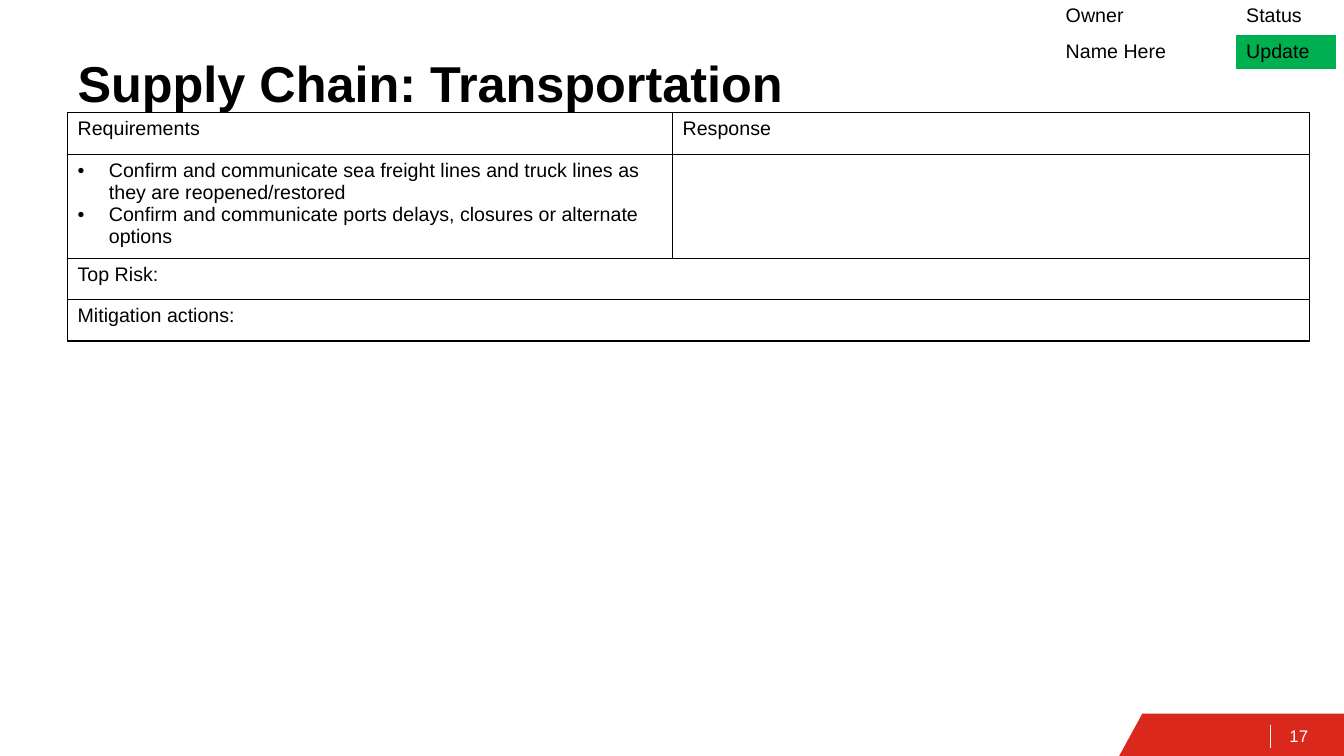
"""Build the supply chain transportation status slide."""
import lxml.etree
import pptx
import pptx.dml.color
import pptx.enum.shapes
import pptx.enum.text
import pptx.oxml
import pptx.oxml.ns
import pptx.util

Inches = pptx.util.Inches
Pt = pptx.util.Pt
qn = pptx.oxml.ns.qn


def colour(value):
    return pptx.dml.color.RGBColor.from_string(value)


class StatusSlide:
    font = "Arial"
    ink = "000000"
    paper = "FFFFFF"
    accent = "DA281C"
    done = "00B050"
    body_size = 14

    def __init__(self, deck):
        self.slide = deck.slides.add_slide(deck.slide_layouts[5])
        self.shapes = self.slide.shapes
        background = self.slide.background.fill
        background.solid()
        background.fore_color.rgb = colour(self.paper)

    def add_words(self, paragraph, words, size, ink, bold=False):
        paragraph.alignment = pptx.enum.text.PP_ALIGN.LEFT
        run = paragraph.add_run()
        run.text = words
        run.font.name = self.font
        run.font.size = Pt(size)
        run.font.bold = bold
        run.font.color.rgb = colour(ink)

    def title(self, words, left, top, width, height):
        heading = self.shapes.title
        heading.left, heading.top = Inches(left), Inches(top)
        heading.width, heading.height = Inches(width), Inches(height)
        frame = heading.text_frame
        frame.word_wrap = True
        frame.auto_size = pptx.enum.text.MSO_AUTO_SIZE.NONE
        frame.vertical_anchor = pptx.enum.text.MSO_ANCHOR.TOP
        frame.paragraphs[0].line_spacing = Pt(48)
        self.add_words(frame.paragraphs[0], words, 36, self.ink, bold=True)

    def banner(self, points):
        corners = [(Inches(x), Inches(y)) for x, y in points]
        outline = self.shapes.build_freeform(*corners[0])
        outline.add_line_segments(corners[1:], close=True)
        band = outline.convert_to_shape()
        band.shadow.inherit = False
        band.fill.solid()
        band.fill.fore_color.rgb = colour(self.accent)
        band.line.fill.background()

    def rule(self, x, top, bottom):
        divider = self.shapes.add_connector(
            pptx.enum.shapes.MSO_CONNECTOR.STRAIGHT,
            Inches(x), Inches(top), Inches(x), Inches(bottom))
        divider.line.color.rgb = colour(self.paper)
        divider.line.width = Pt(0.75)
        lxml.etree.SubElement(divider._element.spPr, qn("a:effectLst"))

    def page_number(self, words, left, top, width, height):
        number = self.shapes.add_textbox(
            Inches(left), Inches(top), Inches(width), Inches(height))
        frame = number.text_frame
        frame.word_wrap = True
        frame.vertical_anchor = pptx.enum.text.MSO_ANCHOR.MIDDLE
        frame.margin_left = frame.margin_right = Inches(0.13)
        frame.margin_top = frame.margin_bottom = Inches(0.07)
        self.add_words(frame.paragraphs[0], words, 12, self.paper)

    def bullet(self, paragraph):
        properties = paragraph._p.get_or_add_pPr()
        properties.set("marL", str(Inches(0.31)))
        properties.set("indent", str(-Inches(0.31)))
        font = lxml.etree.SubElement(properties, qn("a:buFont"))
        font.set("typeface", self.font)
        lxml.etree.SubElement(properties, qn("a:buChar")).set("char", "•")

    def border(self, cell, visible):
        properties = cell._tc.get_or_add_tcPr()
        for position, side in enumerate(("lnL", "lnR", "lnT", "lnB")):
            edge = lxml.etree.Element(qn(f"a:{side}"))
            edge.set("w", str(Pt(1)))
            if visible:
                fill = lxml.etree.SubElement(edge, qn("a:solidFill"))
                lxml.etree.SubElement(fill, qn("a:srgbClr")).set("val", self.ink)
            else:
                lxml.etree.SubElement(edge, qn("a:noFill"))
            properties.insert(position, edge)

    def table(self, left, top, columns, heights, rows, bordered, fills=None):
        grid = self.shapes.add_table(
            len(rows), len(columns), Inches(left), Inches(top),
            Inches(sum(columns)), Inches(sum(heights))).table
        grid.first_row = grid.horz_banding = False
        for column, width in zip(grid.columns, columns):
            column.width = Inches(width)
        for r, (row, height) in enumerate(zip(rows, heights)):
            grid.rows[r].height = Inches(height)
            if len(row) < len(columns):
                grid.cell(r, 0).merge(grid.cell(r, len(columns) - 1))
            for c in range(len(columns)):
                cell = grid.cell(r, c)
                fill = (fills or {}).get((r, c))
                if fill:
                    cell.fill.solid()
                    cell.fill.fore_color.rgb = colour(fill)
                else:
                    cell.fill.background()
                self.border(cell, bordered)
            for c, content in enumerate(row):
                self.fill_cell(grid.cell(r, c), content)

    def fill_cell(self, cell, content):
        bulleted = isinstance(content, list)
        frame = cell.text_frame
        for i, words in enumerate(content if bulleted else [content]):
            paragraph = frame.add_paragraph() if i else frame.paragraphs[0]
            if bulleted:
                self.bullet(paragraph)
            if words:
                self.add_words(paragraph, words, self.body_size, self.ink)


def main():
    deck = pptx.Presentation()
    deck.slide_width, deck.slide_height = Inches(13.33), Inches(7.5)
    page = StatusSlide(deck)
    page.banner([(11.1, 7.5), (11.33, 7.08), (13.33, 7.08), (13.33, 7.5)])
    page.page_number("17", 12.66, 7.1, 0.67, 0.4)
    page.rule(12.6, 7.19, 7.42)
    page.title("Supply Chain: Transportation", 0.67, 0.4, 11.91, 1.45)
    requirements = [
        "Confirm and communicate sea freight lines and truck lines as they are reopened/restored",
        "Confirm and communicate ports delays, closures or alternate options",
    ]
    page.table(
        0.67, 1.12, [6, 6.32], [0.41, 0.97, 0.41, 0.41],
        [["Requirements", "Response"], [requirements, ""],
         ["Top Risk:"], ["Mitigation actions:"]],
        bordered=True)
    page.table(
        10.47, 0, [1.79, 0.99], [0.35, 0.3],
        [["Owner", "Status"], ["Name Here", "Update"]],
        bordered=False, fills={(1, 1): page.done})
    deck.save("out.pptx")


if __name__ == "__main__":
    main()
